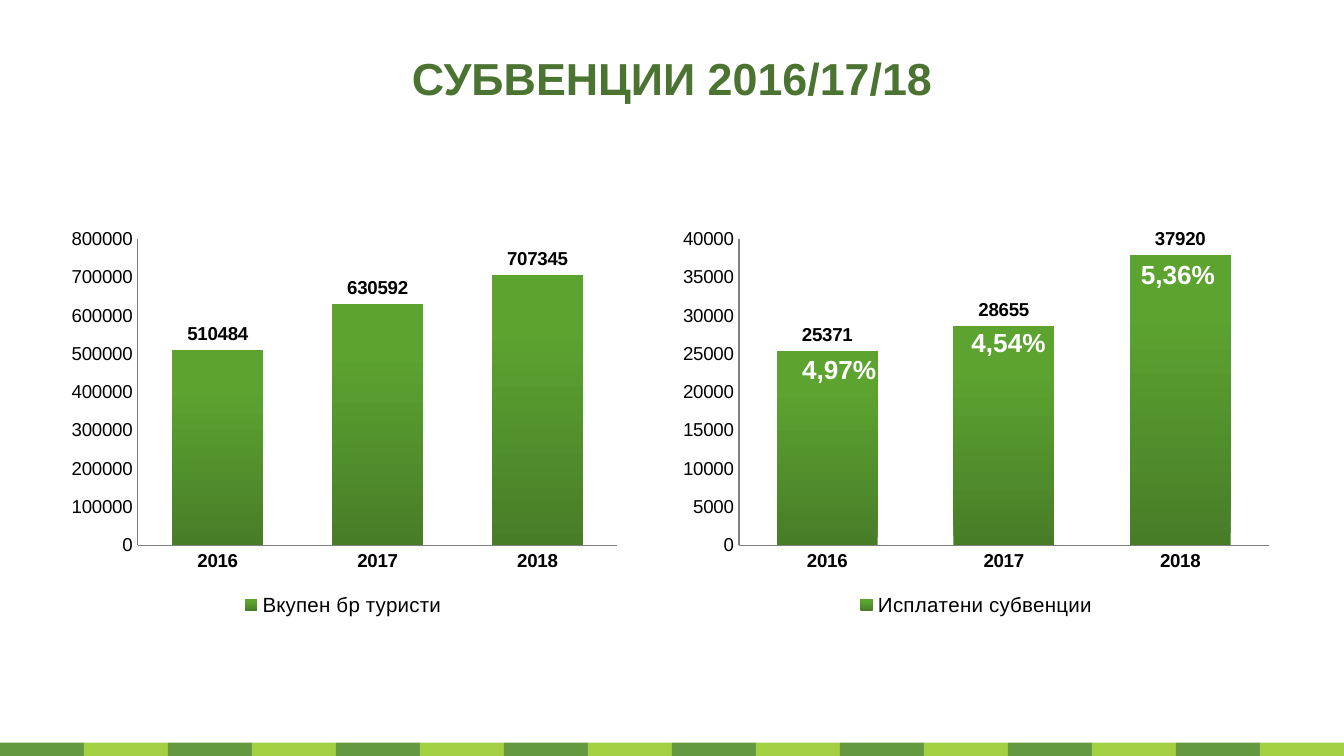
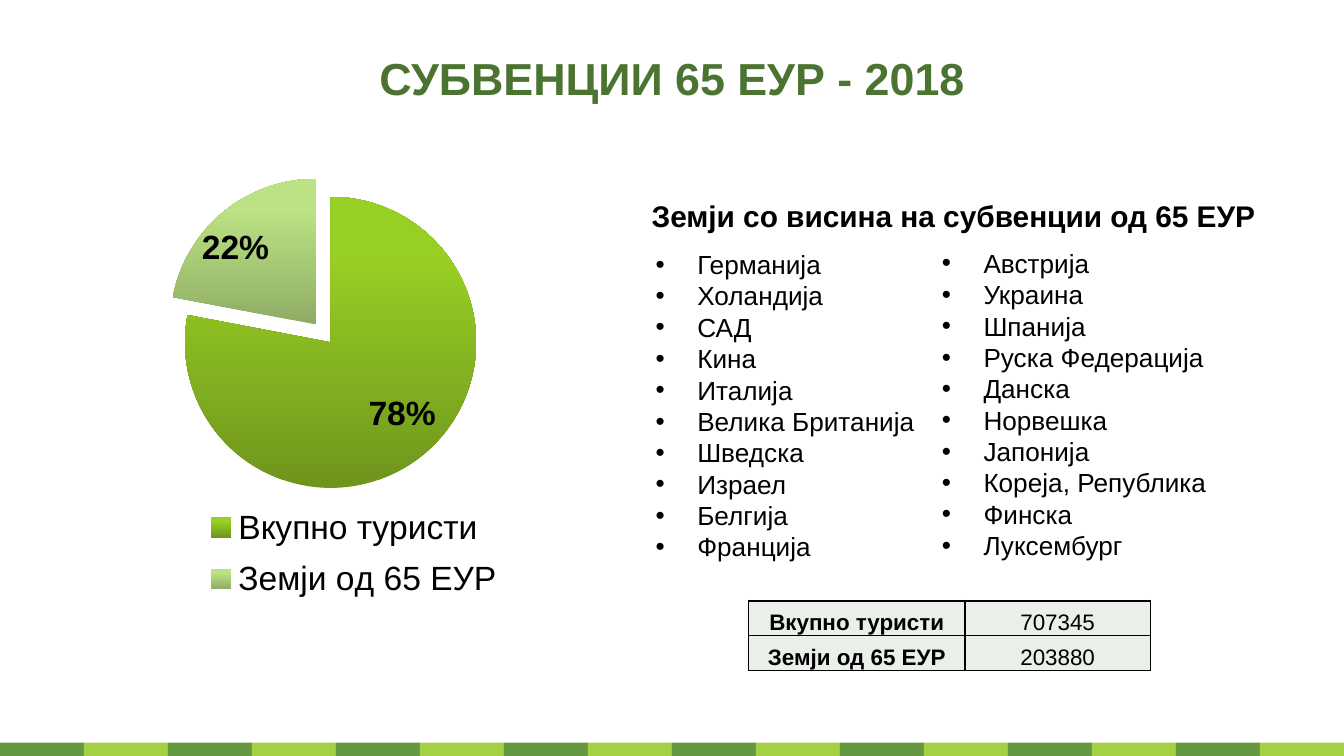
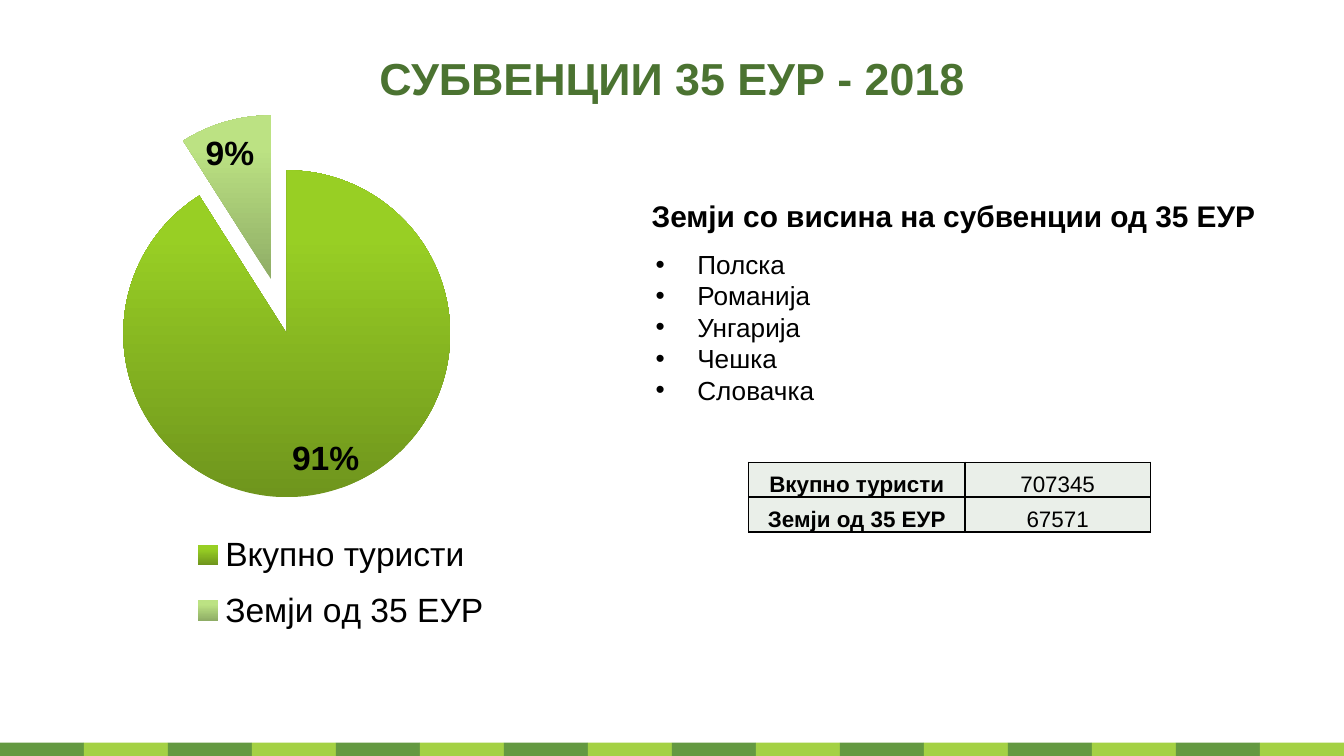
import lxml.etree
import pptx
import pptx.chart.data
import pptx.dml.color
import pptx.enum.chart
import pptx.enum.shapes
import pptx.enum.text
import pptx.oxml
import pptx.oxml.ns
import pptx.util

Inches = pptx.util.Inches
Pt = pptx.util.Pt
qn = pptx.oxml.ns.qn

WIDTH = 10
HEIGHT = WIDTH * 9 / 16
FONT = "Arial"
COLORS = {
    "title": "4B7331", "text": "000000", "white": "FFFFFF", "axis": "808080",
    "band_dark": "649941", "band_light": "A4D144", "cell": "EAEFE9",
    "column_top": "5CA330", "column_bottom": "487D28",
    "total_top": "98CF24", "total_bottom": "6F951D",
    "share_top": "BCE283", "share_bottom": "8FAD66",
}
TOTAL = "Вкупно туристи"


def rgb(name):
    return pptx.dml.color.RGBColor.from_string(COLORS[name])


def style_font(font, size, color="text", bold=False):
    for key, value in {"name": FONT, "size": Pt(size), "bold": bold}.items():
        setattr(font, key, value)
    font.color.rgb = rgb(color)


def add_text(slide, box, lines, size, color="text", bold=False, align="LEFT",
             anchor="TOP", wrap=True, bullet=False):
    frame = slide.shapes.add_textbox(*map(Inches, box)).text_frame
    frame.word_wrap = wrap
    frame.vertical_anchor = pptx.enum.text.MSO_ANCHOR[anchor]
    for index, line in enumerate(lines):
        paragraph = frame.add_paragraph() if index else frame.paragraphs[0]
        paragraph.alignment = pptx.enum.text.PP_ALIGN[align]
        if bullet:
            add_bullet(paragraph)
        run = paragraph.add_run()
        run.text = line
        style_font(run.font, size, color, bold)


def add_bullet(paragraph, indent=0.31):
    properties = paragraph._p.get_or_add_pPr()
    properties.set("marL", str(Inches(indent)))
    properties.set("indent", str(-Inches(indent)))
    lxml.etree.SubElement(properties, qn("a:buFont")).set("typeface", FONT)
    lxml.etree.SubElement(properties, qn("a:buChar")).set("char", "•")


def add_footer_band(slide, count=16, height=0.11):
    step = WIDTH / count
    for index in range(count):
        tile = slide.shapes.add_shape(
            pptx.enum.shapes.MSO_SHAPE.RECTANGLE, Inches(index * step),
            Inches(HEIGHT - height + 0.01), Inches(step), Inches(height))
        tile.shadow.inherit = False
        tile.fill.solid()
        tile.fill.fore_color.rgb = rgb("band_light" if index % 2 else "band_dark")
        tile.line.fill.background()


def add_titled_slide(deck, title):
    slide = deck.slides.add_slide(deck.slide_layouts[6])
    add_footer_band(slide)
    add_text(slide, (0, 0.14, WIDTH, 0.87), [title], 24, "title", True,
             "CENTER", "MIDDLE")
    return slide


def fill_gradient(fill, name):
    """Shade upwards from the bottom colour, keeping the upper part even."""
    fill.gradient()
    fill.gradient_angle = 90
    for stop, end, position in zip(fill.gradient_stops, ("bottom", "top"), (0, 0.8)):
        stop.color.rgb = rgb(f"{name}_{end}")
        stop.position = position


def manual_layout(**values):
    """Return a chart layout element; lengths are parts of the chart."""
    layout = lxml.etree.Element(qn("c:layout"))
    manual = lxml.etree.SubElement(layout, qn("c:manualLayout"))
    for key, value in values.items():
        lxml.etree.SubElement(manual, qn(f"c:{key}")).set("val", str(value))
    return layout


def edge_layout(box, **target):
    return manual_layout(**target, xMode="edge", yMode="edge", **dict(zip("xywh", box)))


def add_base_chart(slide, box, kind, categories, series, values, plot_box, legend):
    data = pptx.chart.data.CategoryChartData()
    data.categories = categories
    data.add_series(series, values)
    chart = slide.shapes.add_chart(
        pptx.enum.chart.XL_CHART_TYPE[kind], *map(Inches, box), data).chart
    chart.has_title = False
    style_font(chart.font, 18)
    plot_area = chart._chartSpace.chart.plotArea
    for layout in plot_area.findall(qn("c:layout")):
        plot_area.remove(layout)
    plot_area.insert(0, edge_layout(plot_box, layoutTarget="inner"))
    chart.has_legend = True
    chart.legend.position = pptx.enum.chart.XL_LEGEND_POSITION[legend]
    chart.legend.include_in_layout = False
    return chart


def add_column_chart(slide, box, series_name, values, top, step, plot_box):
    chart = add_base_chart(slide, box, "COLUMN_CLUSTERED", ["2016", "2017", "2018"],
                           series_name, values, plot_box, "BOTTOM")
    style_font(chart.legend.font, 11)
    plot = chart.plots[0]
    plot.gap_width = 75
    plot.vary_by_categories = False
    series = plot.series[0]
    fill_gradient(series.format.fill, "column")
    labels = series.data_labels
    labels.show_value = True
    labels.position = pptx.enum.chart.XL_LABEL_POSITION.OUTSIDE_END
    style_font(labels.font, 10, bold=True)
    for axis, bold in ((chart.category_axis, True), (chart.value_axis, False)):
        axis.has_major_gridlines = False
        axis.major_tick_mark = pptx.enum.chart.XL_TICK_MARK.NONE
        axis.format.line.color.rgb = rgb("axis")
        axis.format.line.width = Pt(0.75)
        style_font(axis.tick_labels.font, 10, bold=bold)
    scale = {"minimum_scale": 0, "maximum_scale": top, "major_unit": step}
    for key, value in scale.items():
        setattr(chart.value_axis, key, value)


def add_explosion(before, percent):
    explosion = lxml.etree.Element(qn("c:explosion"))
    explosion.set("val", str(percent))
    before.addprevious(explosion)


def add_percent_labels(series, offsets):
    """Show percentages, each moved from the slice's inner end by its offset."""
    labels = series.data_labels
    inside_end = pptx.enum.chart.XL_LABEL_POSITION.INSIDE_END
    label_format = {
        "show_value": False, "show_percentage": True, "number_format": "0%",
        "number_format_is_linked": False, "position": inside_end,
    }
    for key, value in label_format.items():
        setattr(labels, key, value)
    style_font(labels.font, 18, bold=True)
    for index, (x, y) in enumerate(offsets):
        label = series.points[index].data_label
        label.position = inside_end
        style_font(label.font, 18, bold=True)
        element = labels._element.findall(qn("c:dLbl"))[index]
        element.find(qn("c:idx")).addnext(manual_layout(x=x, y=y))
        for key, value in {"showVal": "0", "showPercent": "1"}.items():
            element.find(qn(f"c:{key}")).set("val", value)


def add_pie_chart(slide, box, categories, values, plot_box, legend_box, explosions,
                  label_offsets):
    chart = add_base_chart(slide, box, "PIE", categories, "Series 1", values,
                           plot_box, "RIGHT")
    style_font(chart.legend.font, 18)
    chart.legend._element.find(qn("c:legendPos")).addnext(edge_layout(legend_box))
    plot = chart.plots[0]
    plot.vary_by_categories = True
    series = plot.series[0]
    for index, name in enumerate(("total", "share")):
        fill_gradient(series.points[index].format.fill, name)
    total_explosion, share_explosion = explosions
    total_point = series._element.find(qn("c:dPt"))
    add_explosion(total_point, share_explosion)
    if total_explosion != share_explosion:
        add_explosion(total_point.find(qn("c:spPr")), total_explosion)
    add_percent_labels(series, label_offsets)


def add_cell_borders(cell):
    properties = cell._tc.get_or_add_tcPr()
    for index, side in enumerate(("lnL", "lnR", "lnT", "lnB")):
        border = lxml.etree.Element(qn(f"a:{side}"), w=str(Pt(1)))
        fill = lxml.etree.SubElement(border, qn("a:solidFill"))
        lxml.etree.SubElement(fill, qn("a:srgbClr")).set("val", COLORS["text"])
        properties.insert(index, border)


def add_tourist_table(slide, left, top, rows):
    widths, row_height = (1.61, 1.38), 0.26
    table = slide.shapes.add_table(
        len(rows), len(widths), Inches(left), Inches(top),
        Inches(sum(widths)), Inches(row_height * len(rows))).table
    for column, width in zip(table.columns, widths):
        column.width = Inches(width)
    cell_format = {
        "margin_left": Inches(0.02), "margin_right": Inches(0.02),
        "margin_top": Inches(0.02), "margin_bottom": 0,
        "vertical_anchor": pptx.enum.text.MSO_ANCHOR.BOTTOM,
    }
    for row_index, row in enumerate(rows):
        table.rows[row_index].height = Inches(row_height)
        for column_index, text in enumerate(row):
            cell = table.cell(row_index, column_index)
            for key, value in cell_format.items():
                setattr(cell, key, value)
            cell.fill.solid()
            cell.fill.fore_color.rgb = rgb("cell")
            add_cell_borders(cell)
            paragraph = cell.text_frame.paragraphs[0]
            paragraph.alignment = pptx.enum.text.PP_ALIGN.CENTER
            run = paragraph.add_run()
            run.text = text
            style_font(run.font, 12, bold=column_index == 0)


def add_yearly_slide(deck):
    slide = add_titled_slide(deck, "СУБВЕНЦИИ 2016/17/18")
    add_column_chart(slide, (0.43, 1.63, 4.25, 3), "Вкупен бр туристи",
                     (510484, 630592, 707345), 800000, 100000,
                     (0.14, 0.05, 0.84, 0.76))
    add_column_chart(slide, (5, 1.63, 4.53, 3), "Исплатени субвенции",
                     (25371, 28655, 37920), 40000, 5000,
                     (0.11, 0.05, 0.87, 0.76))
    shares = (("4,97%", 2.58), ("4,54%", 2.38), ("5,36%", 1.87))
    for index, (share, top) in enumerate(shares):
        add_text(slide, (5.87 + 1.26 * index, top, 0.94, 0.34), [share], 14,
                 "white", True)


def add_rate_slide(deck, rate, country_lists, tourists, table_top, pie):
    """Add the slide for one subsidy rate: pie, list of countries and table."""
    slide = add_titled_slide(deck, f"СУБВЕНЦИИ {rate} ЕУР - 2018")
    share = f"Земји од {rate} ЕУР"
    add_pie_chart(slide, categories=[TOTAL, share], **pie)
    for index, countries in enumerate(country_lists):
        add_text(slide, (4.78 + 2.13 * index, 1.8 - 0.01 * index,
                         2.28 + 0.38 * index, 0.1 + 0.24 * len(countries)),
                 countries, 14, bullet=True)
    add_text(slide, (4.75, 1.42, 4.75, 0.37),
             [f"Земји со висина на субвенции од {rate} ЕУР"], 16, bold=True,
             wrap=False)
    add_tourist_table(slide, 5.57, table_top, [(TOTAL, "707345"), (share, tourists)])


def main():
    deck = pptx.Presentation()
    deck.slide_width, deck.slide_height = Inches(WIDTH), Inches(HEIGHT)
    add_yearly_slide(deck)
    add_rate_slide(
        deck, 65,
        [["Германија", "Холандија", "САД", "Кина", "Италија", "Велика Британија",
          "Шведска", "Израел", "Белгија", "Франција"],
         ["Австрија", "Украина", "Шпанија", "Руска Федерација", "Данска",
          "Норвешка", "Јапонија", "Кореја, Република", "Финска", "Луксембург"]],
        "203880", 4.47,
        {"box": (0, 0.61, 6.5, 3.94), "values": (78, 22),
         "plot_box": (0.19, 0.09, 0.36, 0.77),
         "legend_box": (0.23, 0.78, 0.35, 0.22), "explosions": (8, 8),
         "label_offsets": ((0.02, -0.03), (-0.03, 0.02))})
    add_rate_slide(
        deck, 35, [["Полска", "Романија", "Унгарија", "Чешка", "Словачка"]],
        "67571", 3.44,
        {"box": (0.2, 0.67, 5.43, 4.19), "values": (91, 9),
         "plot_box": (0.07, 0.04, 0.56, 0.73),
         "legend_box": (0.22, 0.76, 0.42, 0.23), "explosions": (10, 25),
         "label_offsets": ((0.04, -0.01), (-0.03, 0.01))})
    deck.save("out.pptx")


if __name__ == "__main__":
    main()
